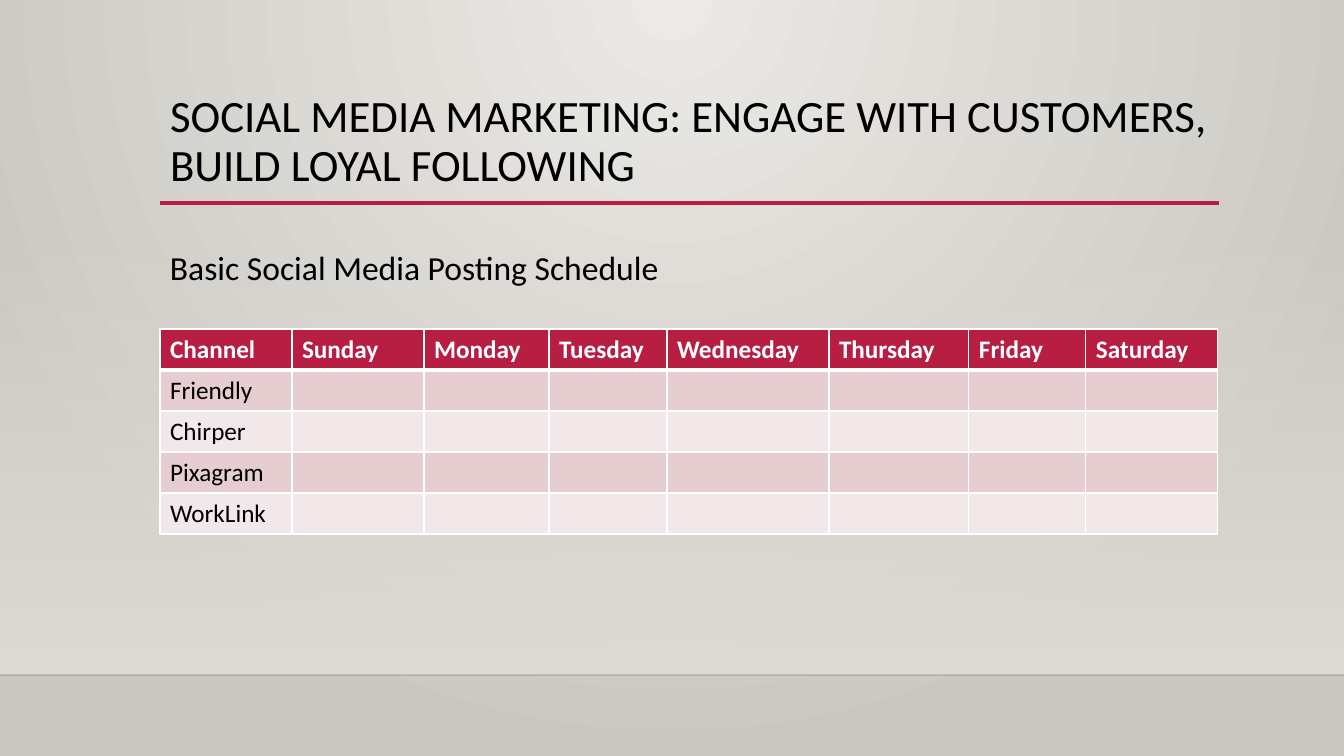
import pptx
import pptx.util
import pptx.dml.color
import pptx.enum.shapes
import pptx.enum.text
import pptx.oxml
import pptx.oxml.ns
import lxml.etree

RGBColor = pptx.dml.color.RGBColor
BLACK = RGBColor(0x00, 0x00, 0x00)
WHITE = RGBColor(0xFF, 0xFF, 0xFF)
CRIMSON = RGBColor(0xB7, 0x1E, 0x42)
ROSE = RGBColor(0xE6, 0xCD, 0xCF)
BLUSH = RGBColor(0xF3, 0xE8, 0xE9)
BG_LIGHT = RGBColor(0xEC, 0xEA, 0xE7)
BG_DARK = RGBColor(0xCA, 0xC7, 0xC1)
SAND = RGBColor(0xDF, 0xDB, 0xD5)
EMU_PER_PX = 914400 / 100.8
qn = pptx.oxml.ns.qn


def px(*lengths):
    return [pptx.util.Emu(round(n * EMU_PER_PX)) for n in lengths]


def style(tf, size, color, bold=False):
    for p in tf.paragraphs:
        p.alignment = pptx.enum.text.PP_ALIGN.LEFT
        p.font.size = pptx.util.Pt(size)
        for r in p.runs:
            r.font.name = "Calibri"
            r.font.size = pptx.util.Pt(size)
            r.font.bold = bold
            r.font.color.rgb = color


prs = pptx.Presentation()
prs.slide_width, prs.slide_height = px(1344, 756)
s = prs.slides.add_slide(prs.slide_layouts[5])

fill = s.background.fill
fill.gradient()
for stop, color in zip(fill.gradient_stops, (BG_LIGHT, BG_DARK)):
    stop.color.rgb = color
lin = s._element.find(".//" + qn("p:bgPr")).find(".//" + qn("a:lin"))
path = lxml.etree.Element(qn("a:path"), path="circle")
lxml.etree.SubElement(path, qn("a:fillToRect"), l="43000", t="0", r="43000", b="100000")
lin.getparent().replace(lin, path)

wall = s.shapes.add_shape(pptx.enum.shapes.MSO_SHAPE.RECTANGLE, *px(0, 223, 1344, 452))
wall.shadow.inherit = False
wall.line.fill.background()
wall.fill.gradient()
wall.fill.gradient_angle = 270
for stop in wall.fill.gradient_stops:
    stop.color.rgb = SAND
clear = wall._element.spPr.find(".//" + qn("a:srgbClr"))
lxml.etree.SubElement(clear, qn("a:alpha"), val="0")

for x1, x2, y, color, width, opacity in (
    (0, 1344, 675, BLACK, 1, 20),
    (160, 1219, 203, CRIMSON, 2.5, 100),
):
    line = s.shapes.add_connector(pptx.enum.shapes.MSO_CONNECTOR.STRAIGHT, *px(x1, y, x2, y))
    line.line.color.rgb = color
    line.line.width = pptx.util.Pt(width)
    spPr = line._element.spPr
    lxml.etree.SubElement(spPr, qn("a:effectLst"))
    if opacity < 100:
        lxml.etree.SubElement(spPr.find(".//" + qn("a:srgbClr")), qn("a:alpha"), val=str(opacity * 1000))

title = s.shapes.title
title.left, title.top, title.width, title.height = px(160, 89, 1058, 116)
tf = title.text_frame
tf.text = "SOCIAL MEDIA MARKETING: ENGAGE WITH CUSTOMERS, BUILD LOYAL FOLLOWING"
tf.word_wrap = True
tf.auto_size = pptx.enum.text.MSO_AUTO_SIZE.NONE
tf.vertical_anchor = pptx.enum.text.MSO_ANCHOR.TOP
tf.paragraphs[0].line_spacing = 0.9
style(tf, 32, BLACK)

columns = (
    ("Channel", 132), ("Sunday", 132), ("Monday", 125), ("Tuesday", 118),
    ("Wednesday", 162), ("Thursday", 140), ("Friday", 117), ("Saturday", 132),
)
channels = ("Friendly", "Chirper", "Pixagram", "WorkLink")
frame = s.shapes.add_table(len(channels) + 1, len(columns), *px(160, 329, 1058, 205))
table = frame.table
for col, (day, width) in zip(table.columns, columns):
    col.width = px(width)[0]
for i, row in enumerate(table.rows):
    row.height = px(41)[0]
    for j, cell in enumerate(row.cells):
        if i == 0:
            cell.text = columns[j][0]
        elif j == 0:
            cell.text = channels[i - 1]
        style(cell.text_frame, 18, BLACK if i else WHITE, i == 0)
        tcPr = cell._tc.get_or_add_tcPr()
        for side in "LRTB":
            thick = (i, side) in ((0, "B"), (1, "T"))
            ln = lxml.etree.SubElement(tcPr, qn("a:ln" + side), w="38100" if thick else "12700")
            solid = lxml.etree.SubElement(ln, qn("a:solidFill"))
            lxml.etree.SubElement(solid, qn("a:srgbClr"), val=str(WHITE))
        cell.fill.solid()
        cell.fill.fore_color.rgb = CRIMSON if i == 0 else (BLUSH, ROSE)[i % 2]

caption = s.shapes.add_textbox(*px(160, 242, 675, 50))
tf = caption.text_frame
tf.text = "Basic Social Media Posting Schedule"
tf.word_wrap = True
tf.auto_size = pptx.enum.text.MSO_AUTO_SIZE.SHAPE_TO_FIT_TEXT
style(tf, 24, BLACK)

prs.save("out.pptx")
